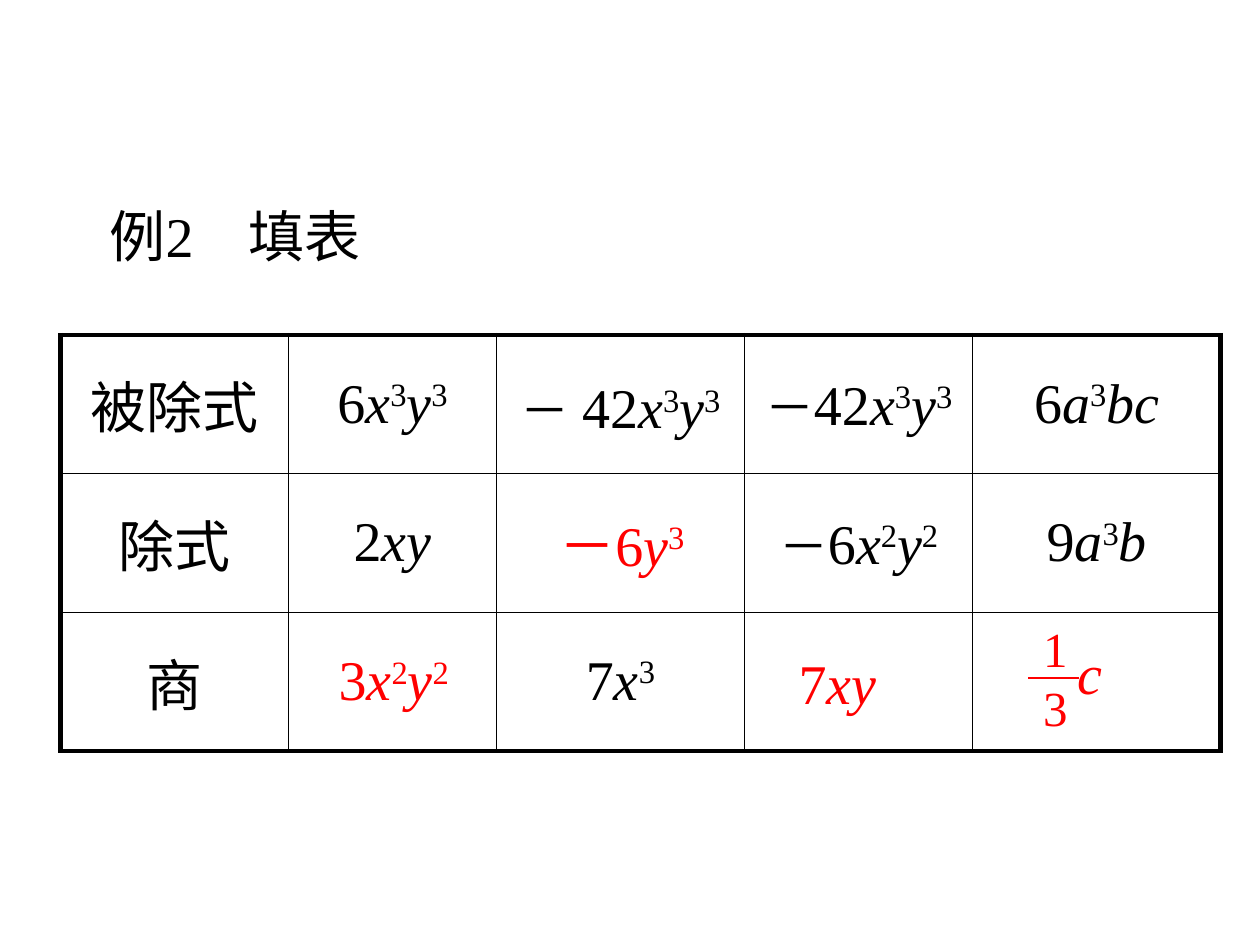
from itertools import groupby

from lxml.etree import SubElement
from pptx import Presentation
from pptx.dml.color import RGBColor
from pptx.enum.shapes import MSO_CONNECTOR
from pptx.enum.text import MSO_ANCHOR, MSO_AUTO_SIZE, PP_ALIGN
from pptx.oxml import parse_xml
from pptx.oxml.ns import nsdecls, qn
from pptx.util import Inches, Pt

FONT, BLACK, RED = "Times New Roman", "000000", "FF0000"
TITLE = "例2\t填表"
ROWS = [
    ["被除式", "6x3y3", "－ 42x3y3", "－42x3y3", "6a3bc"],
    ["除式", "2xy", "", "－6x2y2", "9a3b"],
    ["商", "", "7x3", "", ""],
]
WIDTHS = [1.81, 1.65, 1.97, 1.81, 1.97]
HEIGHT = 1.1
ANSWERS = [
    ("3x2y2", 2.59, 5.07, 1.57, 0.63),
    ("－6y3", 4.34, 4, 1.57, 0.63),
    ("7xy", 6.24, 5.1, 1.57, 0.63),
]
QUOTIENT = [
    ("c", 8.45, 5.02, 0.63, 0.63, 32),
    ("3", 8.18, 5.33, 0.94, 0.57, 28),
    ("1", 8.18, 4.86, 0.55, 0.57, 28),
]
BAR = (8.16, 5.38, 8.56, 5.38)


def color(code):
    return RGBColor.from_string(code)


def style(para, tint, size=32):
    para.font.name = FONT
    para.font.size = Pt(size)
    para.font.color.rgb = color(tint)


def kind(char):
    if char.isascii() and char.isalpha():
        return "letter"
    return "minus" if char == "－" else "plain"


def write(para, text, tint, size=32, minus=32):
    """Set letters in italics and raise each number that follows a letter."""
    style(para, tint, size)
    last = None
    for now, chars in groupby(text, kind):
        run = para.add_run()
        run.text = "".join(chars)
        if now == "letter":
            run.font.italic = True
        elif now == "minus" and minus != size:
            run.font.size = Pt(minus)
            run.font.name = "Arial"
        elif last == "letter":
            run.font._element.set("baseline", "30000")
        last = now


def add_text(shapes, text, left, top, width, height, size=32):
    box = shapes.add_textbox(*map(Inches, (left, top, width, height)))
    frame = box.text_frame
    frame.word_wrap = True
    frame.auto_size = MSO_AUTO_SIZE.SHAPE_TO_FIT_TEXT
    write(frame.paragraphs[0], text, RED, size)


def add_border(cell, sides):
    props = cell._tc.get_or_add_tcPr()
    for spot, (side, width) in enumerate(sides):
        props.insert(spot, parse_xml(
            f'<a:ln{side} {nsdecls("a")} w="{Pt(width)}"><a:solidFill>'
            f'<a:srgbClr val="{BLACK}"/></a:solidFill></a:ln{side}>'))


def add_title(slide):
    title = slide.shapes.title
    title.left, title.top, title.width, title.height = map(
        Inches, (0.77, 1.55, 5.2, 0.64))
    frame = title.text_frame
    frame.vertical_anchor = MSO_ANCHOR.TOP
    frame.auto_size = MSO_AUTO_SIZE.NONE
    para = frame.paragraphs[0]
    para.text = TITLE
    para.alignment = PP_ALIGN.LEFT
    tabs = SubElement(para._p.get_or_add_pPr(), qn("a:tabLst"))
    SubElement(tabs, qn("a:tab"), pos=str(Inches(1.1)), algn="l")
    style(para, BLACK)


def add_grid(slide):
    rows, cols = len(ROWS), len(WIDTHS)
    table = slide.shapes.add_table(
        rows, cols, Inches(0.48), Inches(2.66),
        Inches(sum(WIDTHS)), Inches(HEIGHT * rows)).table
    table.first_row = table.horz_banding = False
    for col, width in zip(table.columns, WIDTHS):
        col.width = Inches(width)
    for r, row in enumerate(ROWS):
        table.rows[r].height = Inches(HEIGHT)
        for c, text in enumerate(row):
            cell = table.cell(r, c)
            cell.fill.background()
            cell.vertical_anchor = MSO_ANCHOR.MIDDLE
            edges = (c == 0, c == cols - 1, r == 0, r == rows - 1)
            add_border(cell, [(side, 3 if edge else 1)
                              for side, edge in zip("LRTB", edges)])
            para = cell.text_frame.paragraphs[0]
            para.alignment = PP_ALIGN.CENTER
            write(para, text, BLACK, minus=28)


def add_answers(slide):
    for item in ANSWERS:
        add_text(slide.shapes, *item)
    group = slide.shapes.add_group_shape()
    for item in QUOTIENT:
        add_text(group.shapes, *item)
    bar = group.shapes.add_connector(
        MSO_CONNECTOR.STRAIGHT, *map(Inches, BAR))
    bar.line.color.rgb = color(RED)
    bar.line.width = Pt(0.75)
    SubElement(bar._element.spPr, qn("a:effectLst"))


def main():
    deck = Presentation()
    deck.slide_width, deck.slide_height = Inches(10), Inches(7.5)
    slide = deck.slides.add_slide(deck.slide_layouts[5])
    add_title(slide)
    add_grid(slide)
    add_answers(slide)
    deck.save("out.pptx")


if __name__ == "__main__":
    main()
